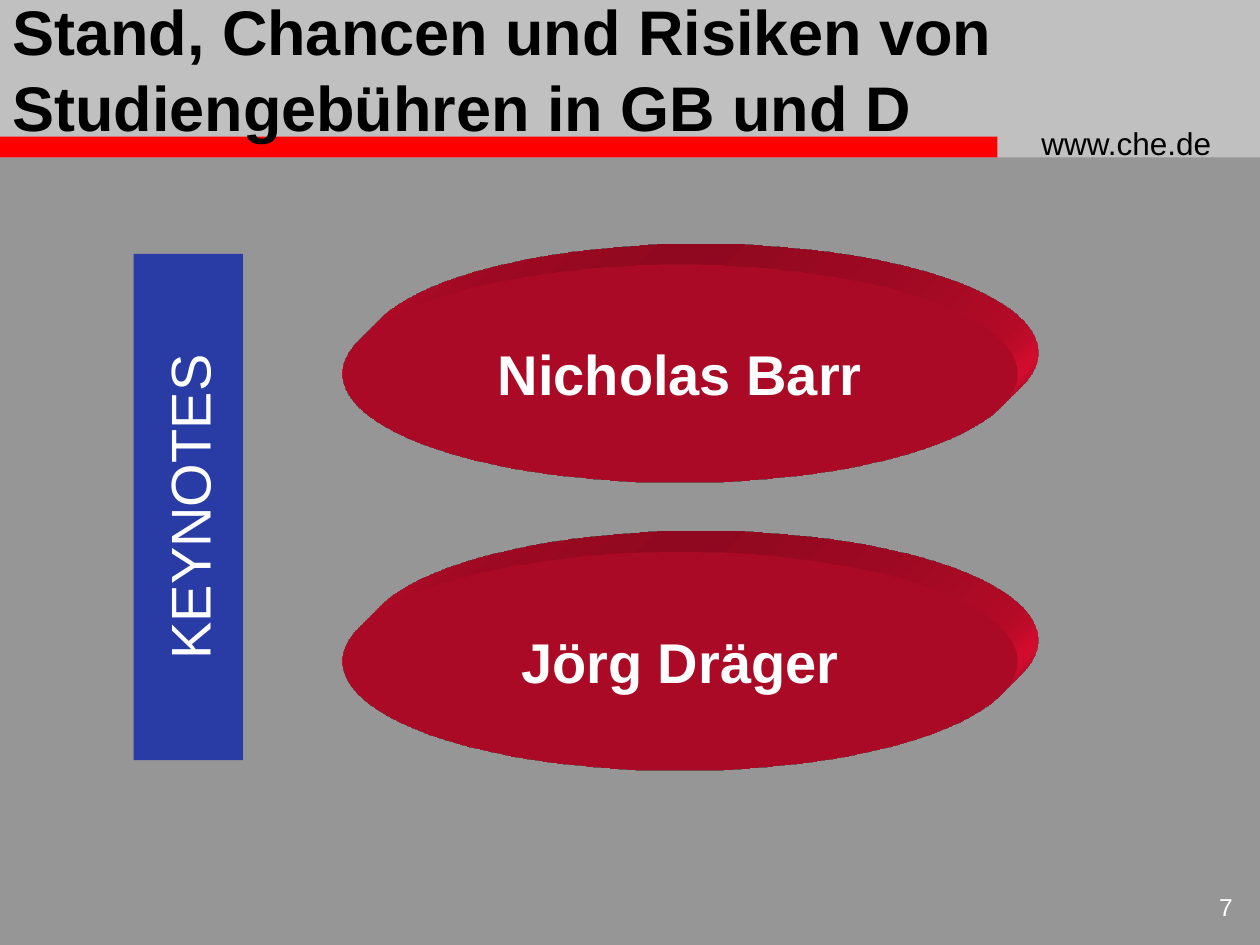
"""Build the keynote speakers slide with two extruded ellipses."""
from lxml import etree
from pptx import Presentation
from pptx.dml.color import RGBColor
from pptx.enum.shapes import MSO_SHAPE
from pptx.enum.text import MSO_ANCHOR, PP_ALIGN
from pptx.util import Pt

RECT, OVAL = MSO_SHAPE.RECTANGLE, MSO_SHAPE.OVAL
TOP, MIDDLE = MSO_ANCHOR.TOP, MSO_ANCHOR.MIDDLE
LEFT, CENTER, RIGHT = PP_ALIGN.LEFT, PP_ALIGN.CENTER, PP_ALIGN.RIGHT
BLACK = RGBColor(0x00, 0x00, 0x00)
WHITE = RGBColor(0xFF, 0xFF, 0xFF)
GREY = RGBColor(0x96, 0x96, 0x96)
SILVER = RGBColor(0xC0, 0xC0, 0xC0)
RED = RGBColor(0xFF, 0x00, 0x00)
CRIMSON = RGBColor(0xF0, 0x0E, 0x34)
BLUE = RGBColor(0x29, 0x3B, 0xA5)

NS = "http://schemas.openxmlformats.org/drawingml/2006/main"
EXTRUSION = f"""<a:extrusion xmlns:a="{NS}">
<a:scene3d><a:camera prst="legacyObliqueTopRight"/>
<a:lightRig rig="legacyFlat3" dir="b"/></a:scene3d>
<a:sp3d extrusionH="430200" prstMaterial="legacyMatte">
<a:bevelT w="13500" h="13500" prst="angle"/>
<a:bevelB w="13500" h="13500" prst="angle"/>
<a:extrusionClr><a:srgbClr val="{CRIMSON}"/></a:extrusionClr></a:sp3d>
</a:extrusion>"""


def add_block(s, kind, box, color):
    sp = s.shapes.add_shape(kind, *map(Pt, box))
    sp.shadow.inherit = False
    sp.fill.solid()
    sp.fill.fore_color.rgb = color
    sp.line.fill.background()
    return sp


def set_text(sp, text, align, anchor, wrap, color, **font):
    tf = sp.text_frame
    tf.word_wrap = wrap
    tf.vertical_anchor = anchor
    p = tf.paragraphs[0]
    p.alignment = align
    r = p.add_run()
    r.text = text
    r.font.color.rgb = color
    for name, value in {"name": "Arial", **font}.items():
        setattr(r.font, name, value)


prs = Presentation()
prs.slide_width, prs.slide_height = Pt(720), Pt(540)
s = prs.slides.add_slide(prs.slide_layouts[6])
s.background.fill.solid()
s.background.fill.fore_color.rgb = GREY

add_block(s, RECT, (0, 0, 720, 90), SILVER)
add_block(s, RECT, (-1, 78, 571, 12), RED)

title = "Stand, Chancen und Risiken von Studiengebühren in GB und D"
for text, box, align, anchor, color, size, bold in (
    ("www.che.de", (588, 67.5, 126, 29), LEFT, TOP, BLACK, 18, False),
    ("7", (669.5, 506, 42, 30), RIGHT, TOP, WHITE, 14, False),
    (title, (0, 0, 582, 78), LEFT, MIDDLE, BLACK, 36, True),
):
    sp = s.shapes.add_textbox(*map(Pt, box))
    set_text(sp, text, align, anchor, True, color, size=Pt(size), bold=bold)

for i, speaker in enumerate(("Nicholas Barr", "Jörg Dräger")):
    sp = add_block(s, OVAL, (195.6, 151 + 164.4 * i, 386, 124.8), CRIMSON)
    sp._element.spPr.extend(list(etree.fromstring(EXTRUSION)))
    set_text(sp, speaker, CENTER, MIDDLE, False, WHITE, size=Pt(32), bold=True)

sp = add_block(s, RECT, (-37, 258.5, 289.2, 62.4), BLUE)
sp.rotation = 270
set_text(sp, "KEYNOTES", CENTER, MIDDLE, False, WHITE, size=Pt(32))

prs.save("out.pptx")
